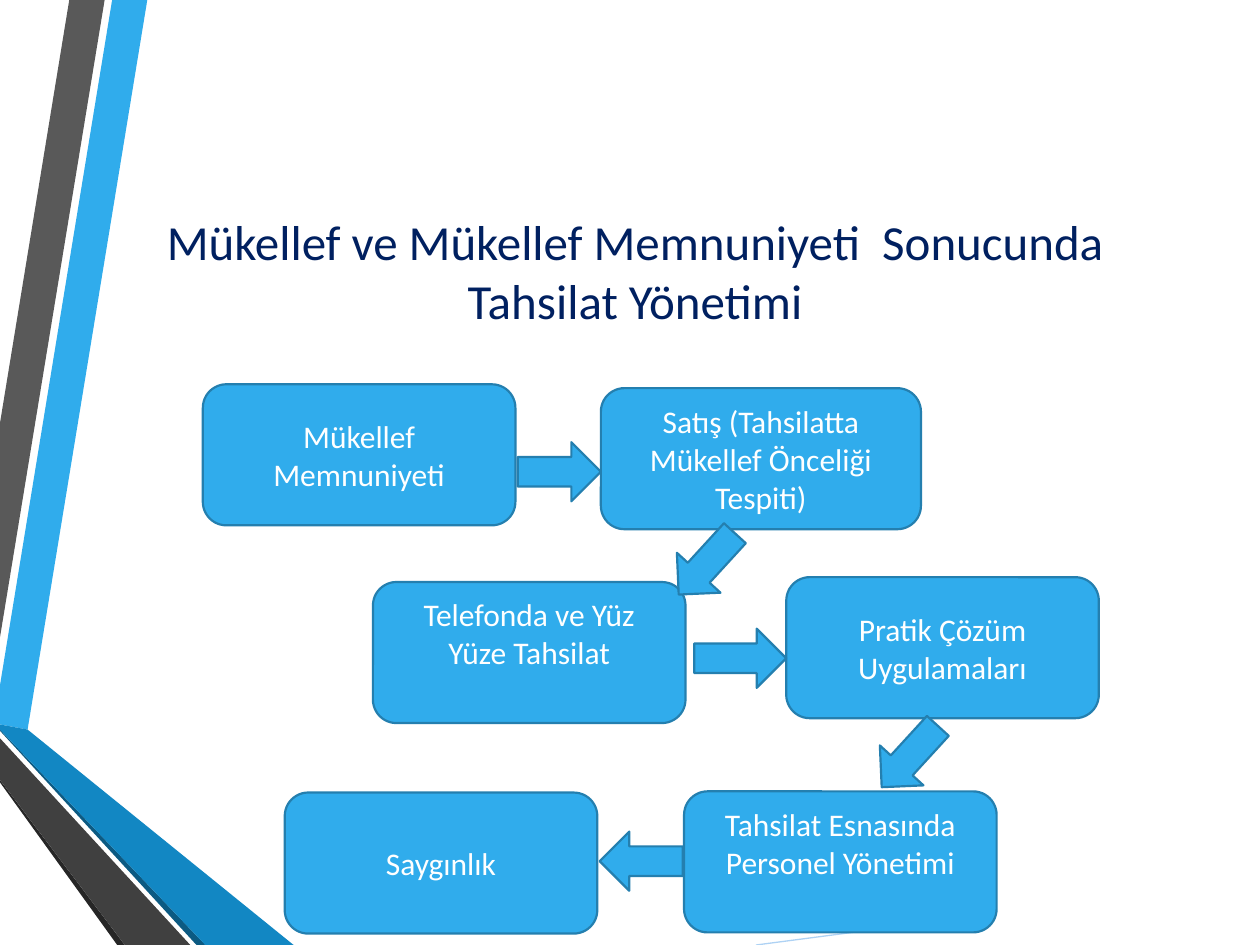
import pptx
import pptx.util
import pptx.dml.color
import pptx.enum.shapes
import pptx.enum.text
import pptx.oxml
from dataclasses import dataclass

Pt = pptx.util.Pt
Kind = pptx.enum.shapes.MSO_SHAPE
Anchor = pptx.enum.text.MSO_ANCHOR
Align = pptx.enum.text.PP_ALIGN


@dataclass(frozen=True)
class Theme:
    font: str = "Calibri"
    head: int = 28
    body: int = 18
    edge: float = 1.25
    thin: float = 0.75
    blue: str = "30ACEC"
    rim: str = "247FAF"
    pale: str = "AED2F4"
    navy: str = "002060"
    white: str = "FFFFFF"
    gray: str = "595959"
    dark: str = "404040"
    black: str = "262626"
    deep: str = "0C5A82"
    mid: str = "1287C3"


theme = Theme()


def color(code):
    return pptx.dml.color.RGBColor.from_string(code)


def paint(shape, fill, rim=None):
    shape.shadow.inherit = False
    shape.fill.solid()
    shape.fill.fore_color.rgb = color(fill)
    if rim:
        shape.line.color.rgb = color(rim)
        shape.line.width = Pt(theme.edge)
    else:
        shape.line.fill.background()


def write(frame, text, size, ink, anchor):
    frame.word_wrap = True
    frame.vertical_anchor = anchor
    frame.text = text
    for para in frame.paragraphs:
        para.alignment = Align.CENTER
        for run in para.runs:
            run.font.name = theme.font
            run.font.size = Pt(size)
            run.font.color.rgb = color(ink)


def add_bands(slide, box):
    left, top, width, high = box
    bands = [
        (theme.blue, [(0, 391.7), (0, 414), (15.8, 416.9), (84.2, 0), (64.1, 0)]),
        (theme.gray, [(59.8, 0), (39.6, 0), (0, 241.9), (0, 364.3)]),
        (theme.black, [(0, 445.7), (0, 447.1), (67, high), (71.3, high)]),
        (theme.deep, [(0, 416.9), (0, 417.6), (112.3, high), (117.4, high)]),
        (theme.mid, [(0, 416.9), (117.4, high), (width, high), (15.8, 416.9), (0, 414)]),
        (theme.dark, [(0, 445.7), (71.3, high), (108.7, high), (0, 421.9)]),
    ]
    for fill, spots in bands:
        spots = [(Pt(left + x), Pt(top + y)) for x, y in spots]
        path = slide.shapes.build_freeform(*spots[0], scale=1.0)
        path.add_line_segments(spots[1:], close=True)
        paint(path.convert_to_shape(), fill)


def add_title(slide, box):
    shape = slide.shapes.add_textbox(*map(Pt, box))
    text = "Mükellef ve Mükellef Memnuniyeti  Sonucunda Tahsilat Yönetimi"
    write(shape.text_frame, text, theme.head, theme.navy, Anchor.BOTTOM)


def add_line(slide, box):
    left, top, width, high = box
    line = slide.shapes.add_connector(
        pptx.enum.shapes.MSO_CONNECTOR.STRAIGHT,
        Pt(left), Pt(top + high), Pt(left + width), Pt(top))
    line.line.color.rgb = color(theme.pale)
    line.line.width = Pt(theme.thin)
    space = pptx.oxml.ns.qn
    ln = line.line._get_or_add_ln()
    ln.append(ln.makeelement(space("a:tailEnd"), {"type": "triangle"}))
    props = line._element.spPr
    props.append(props.makeelement(space("a:effectLst"), {}))


def add_flow(slide, box):
    left, top = box[:2]
    wide, tall, line = 178.6, 80.6, 22
    steps = [
        ("Mükellef\nMemnuniyeti", 0, 0, wide, 0),
        ("Satış (Tahsilatta Mükellef Önceliği Tespiti)", 227.5, 2.2, 182.9, 0),
        ("Tahsilat Esnasında Personel Yönetimi", 275, 232.6, wide, line),
        ("Pratik Çözüm Uygulamaları", 333.4, 110.2, wide, 0),
        ("Saygınlık", 46.8, 233.3, wide, 0),
        ("Telefonda ve Yüz Yüze Tahsilat", 97.2, 113, wide, line),
    ]
    for text, x, y, width, lift in steps:
        shape = slide.shapes.add_shape(
            Kind.ROUNDED_RECTANGLE, Pt(left + x), Pt(top + y), Pt(width), Pt(tall))
        paint(shape, theme.blue, theme.rim)
        frame = shape.text_frame
        frame.margin_bottom = Pt(3.6 + lift)
        write(frame, text, theme.body, theme.white, Anchor.MIDDLE)

    arrows = [
        (180, 33.1, 47.5, 0),
        (264.2, 85.7, 47.5, 132.5),
        (280.8, 139.7, 52.6, 0),
        (380.2, 195.8, 47.5, 132.5),
        (226.8, 255.6, 47.5, 180),
    ]
    for x, y, width, turn in arrows:
        arrow = slide.shapes.add_shape(
            Kind.RIGHT_ARROW, Pt(left + x), Pt(top + y), Pt(width), Pt(33.8))
        arrow.rotation = turn
        paint(arrow, theme.blue, theme.rim)


def main():
    deck = pptx.Presentation()
    deck.slide_width = Pt(720)
    deck.slide_height = Pt(540)
    slide = deck.slides.add_slide(deck.slide_layouts[6])
    add_bands(slide, (0, 0, 167.8, 540))
    add_title(slide, (56.9, 84.2, 612, 107.3))
    add_line(slide, (432, 527.8, 93.6, 12.2))
    add_flow(slide, (115.9, 219.6, 512, 313.9))
    deck.save("out.pptx")


if __name__ == "__main__":
    main()
